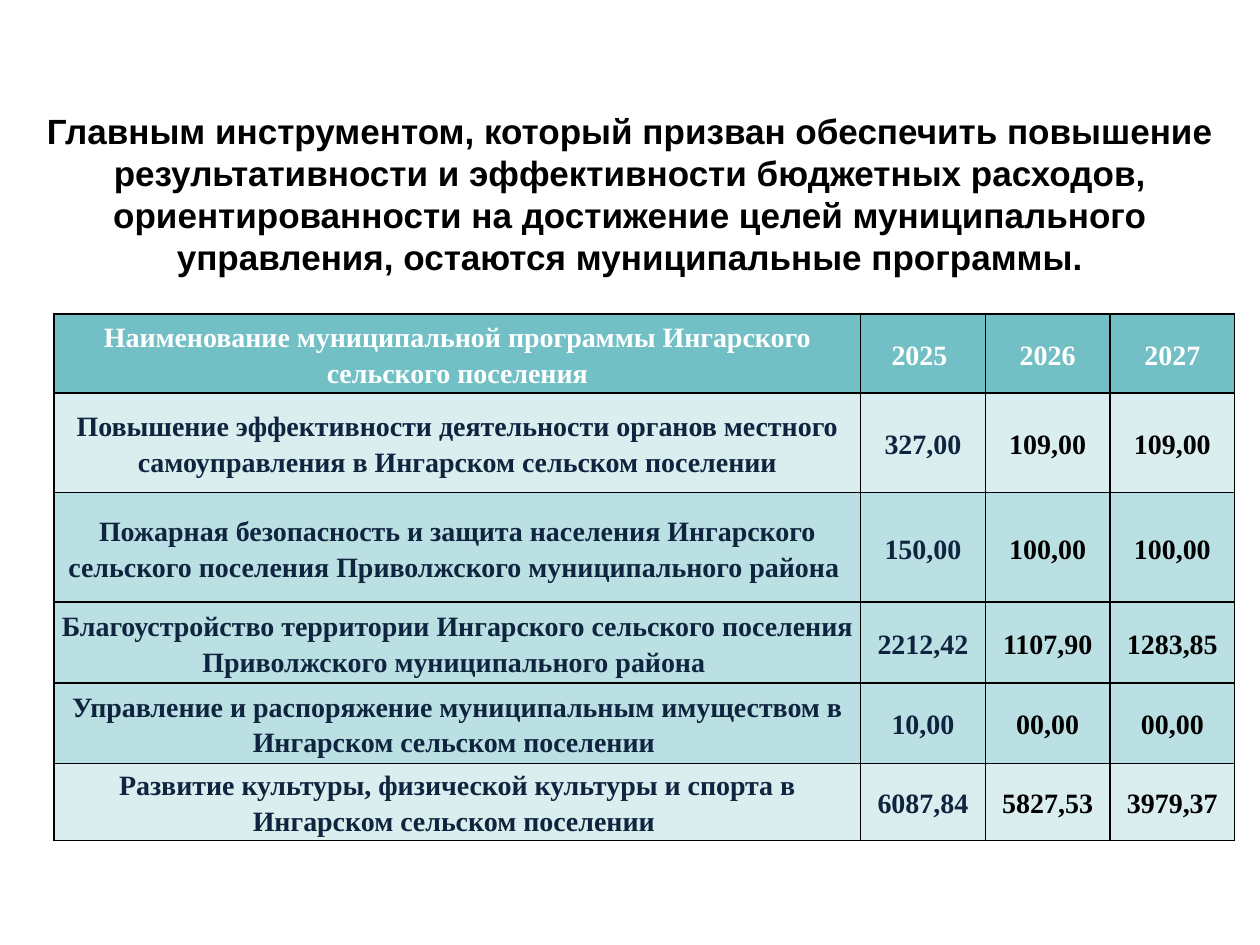
from dataclasses import dataclass

from lxml import etree
from pptx import Presentation
from pptx.dml.color import RGBColor
from pptx.enum.text import MSO_ANCHOR, PP_ALIGN
from pptx.oxml.ns import qn
from pptx.slide import Slide
from pptx.table import _Cell
from pptx.util import Inches, Pt

CENTER = PP_ALIGN.CENTER
MIDDLE = MSO_ANCHOR.MIDDLE

BLACK = RGBColor(0x00, 0x00, 0x00)
WHITE = RGBColor(0xFF, 0xFF, 0xFF)
NAVY = RGBColor(0x0F, 0x24, 0x3E)
TEAL = RGBColor(0x72, 0xBF, 0xC5)
PALE = RGBColor(0xDA, 0xED, 0xEF)
AQUA = RGBColor(0xBB, 0xE0, 0xE3)

HEADING = (
    "Главным инструментом, который призван обеспечить повышение "
    "результативности и эффективности бюджетных расходов, "
    "ориентированности на достижение целей муниципального управления, "
    "остаются муниципальные программы."
)
COLUMN_WIDTHS = (6.4, 0.99, 0.99, 0.99)
BORDER_SIDES = ("a:lnL", "a:lnR", "a:lnT", "a:lnB")


@dataclass(frozen=True)
class ProgramRow:
    texts: tuple[str, str, str, str]
    height: float
    fill: RGBColor
    colors: tuple[RGBColor, ...] = (NAVY, NAVY, BLACK, BLACK)


ROWS = (
    ProgramRow(
        ("Наименование муниципальной программы Ингарского сельского поселения",
         "2025 ", "2026", "2027"),
        0.63, TEAL, (WHITE,) * 4,
    ),
    ProgramRow(
        ("Повышение эффективности деятельности органов местного "
         "самоуправления в Ингарском сельском поселении",
         "327,00", "109,00", "109,00"),
        0.79, PALE,
    ),
    ProgramRow(
        ("Пожарная безопасность и защита населения Ингарского сельского "
         "поселения Приволжского муниципального района ",
         "150,00", "100,00", "100,00"),
        0.87, AQUA,
    ),
    ProgramRow(
        ("Благоустройство территории Ингарского сельского поселения "
         "Приволжского муниципального района ",
         "2212,42", "1107,90", "1283,85"),
        0.64, AQUA,
    ),
    ProgramRow(
        ("Управление и распоряжение муниципальным имуществом в "
         "Ингарском сельском поселении ",
         "10,00", "00,00", "00,00"),
        0.64, AQUA,
    ),
    ProgramRow(
        ("Развитие культуры, физической культуры и спорта в "
         "Ингарском сельском поселении ",
         "6087,84", "5827,53", "3979,37"),
        0.61, PALE,
    ),
)


def add_heading(page: Slide) -> None:
    box = page.shapes.add_textbox(Inches(0), Inches(0.42), Inches(10), Inches(1.85))
    frame = box.text_frame
    frame.word_wrap = True
    frame.vertical_anchor = MIDDLE
    frame.margin_top = Inches(0.43)
    frame.text = HEADING
    para = frame.paragraphs[0]
    para.alignment = CENTER
    font = para.runs[0].font
    font.name = "Arial"
    font.size = Pt(20)
    font.bold = True
    font.color.rgb = BLACK


def add_borders(cell: _Cell) -> None:
    properties = cell._tc.get_or_add_tcPr()
    for side in BORDER_SIDES:
        line = etree.SubElement(properties, qn(side), w=str(Pt(1)))
        fill = etree.SubElement(line, qn("a:solidFill"))
        etree.SubElement(fill, qn("a:srgbClr"), val=str(BLACK))


def fill_cell(cell: _Cell, text: str, color: RGBColor, fill: RGBColor) -> None:
    add_borders(cell)
    cell.fill.solid()
    cell.fill.fore_color.rgb = fill
    cell.vertical_anchor = MIDDLE
    cell.margin_left = cell.margin_right = Inches(0.05)
    cell.margin_top = cell.margin_bottom = Inches(0)
    cell.text_frame.text = text
    para = cell.text_frame.paragraphs[0]
    para.alignment = CENTER
    para.line_spacing = 1.15
    para.space_after = Pt(10)
    font = para.runs[0].font
    font.name = "Times New Roman"
    font.size = Pt(16)
    font.bold = True
    font.color.rgb = color


def add_program_table(page: Slide) -> None:
    table = page.shapes.add_table(
        len(ROWS), len(COLUMN_WIDTHS),
        Inches(0.43), Inches(2.49), Inches(9.37), Inches(4.18),
    ).table
    table.horz_banding = False
    for column, width in zip(table.columns, COLUMN_WIDTHS):
        column.width = Inches(width)
    for table_row, program in zip(table.rows, ROWS):
        table_row.height = Inches(program.height)
        for cell, text, color in zip(table_row.cells, program.texts, program.colors):
            fill_cell(cell, text, color, program.fill)


def main() -> None:
    deck = Presentation()
    deck.slide_width = Inches(10)
    deck.slide_height = Inches(7.5)
    page = deck.slides.add_slide(deck.slide_layouts[6])
    add_heading(page)
    add_program_table(page)
    deck.save("out.pptx")


if __name__ == "__main__":
    main()
